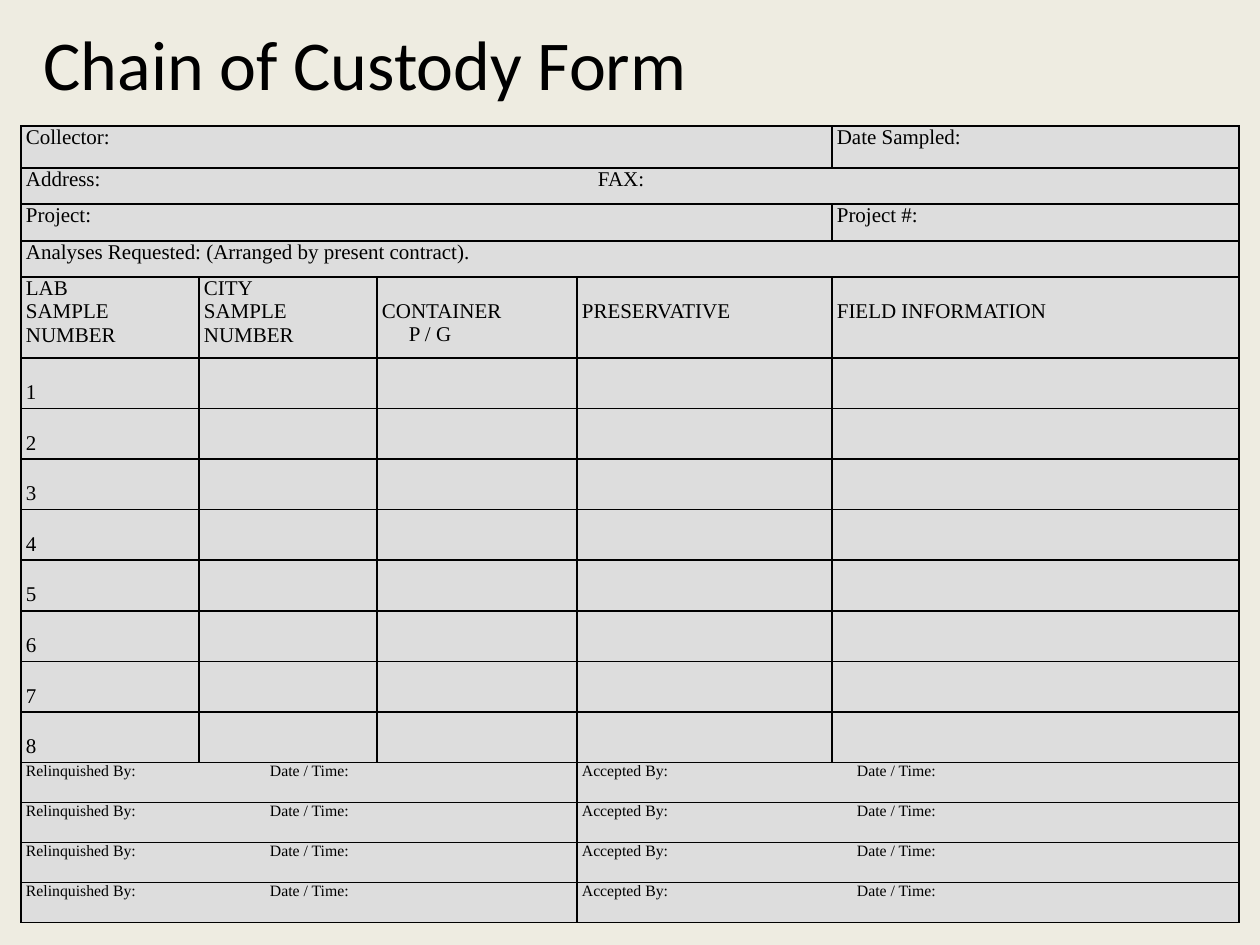
from lxml import etree
from pptx import Presentation
from pptx.dml.color import RGBColor
from pptx.enum.text import MSO_ANCHOR, PP_ALIGN
from pptx.oxml.ns import qn
from pptx.util import Pt

PX = 914400 // 126
MIDDLE, LEFT = MSO_ANCHOR.MIDDLE, PP_ALIGN.LEFT
TITLE_FONT, FORM_FONT = "Calibri", "Times New Roman"
INK, CELL_FILL, BACKGROUND = "000000", "DDDDDD", "EEECE1"
LINE_HEIGHT = 23

TITLE = "Chain of Custody Form"
COLUMN_WIDTHS = [178, 178, 200, 255, 407]
SAMPLE_COUNT, SAMPLES_HEIGHT = 8, 405
TRANSFER_COUNT, TRANSFER_HEIGHT = 4, 40

# Each row: height, text size, lines pushed down by one, and cells as (text, columns, tab stop)
DETAIL_ROWS = [
    (42, 12, [("Collector:", 4, 0), ("Date Sampled:", 1, 0)]),
    (36, 12, [("Address:\tFAX:", 5, 572)]),
    (37, 12, [("Project:", 4, 0), ("Project #:", 1, 0)]),
    (36, 12, [("Analyses Requested: (Arranged by present contract).", 5, 0)]),
    (81, 12, [
        ("LAB\nSAMPLE\nNUMBER", 1, 0),
        ("CITY\nSAMPLE\nNUMBER", 1, 0),
        ("CONTAINER\nP / G", 1, 0),
        ("PRESERVATIVE", 1, 0),
        ("FIELD INFORMATION", 1, 0),
    ]),
]
SAMPLE_ROWS = [
    (SAMPLES_HEIGHT / SAMPLE_COUNT, 12, [(str(number), 1, 0)] + [("", 1, 0)] * 4)
    for number in range(1, SAMPLE_COUNT + 1)
]
TRANSFER_ROWS = [
    (TRANSFER_HEIGHT, 9, [("Relinquished By:\tDate / Time:", 3, 244),
                          ("Accepted By:\tDate / Time:", 2, 275)])
] * TRANSFER_COUNT
ROWS = DETAIL_ROWS + SAMPLE_ROWS + TRANSFER_ROWS
LOWERED = {"CONTAINER\nP / G", "PRESERVATIVE", "FIELD INFORMATION"} | {
    cells[0][0] for _, _, cells in SAMPLE_ROWS
}


def px(value):
    return round(value * PX)


def color(value):
    return RGBColor.from_string(value)


def style_cell(cell):
    """Give a cell its borders, fill and margins."""
    properties = cell._tc.get_or_add_tcPr()
    for side in ("lnL", "lnR", "lnT", "lnB"):
        line = etree.SubElement(properties, qn(f"a:{side}"), w=str(Pt(1)))
        fill = etree.SubElement(line, qn("a:solidFill"))
        etree.SubElement(fill, qn("a:srgbClr"), val=INK)
    cell.fill.solid()
    cell.fill.fore_color.rgb = color(CELL_FILL)
    cell.margin_left = cell.margin_right = px(5)
    cell.margin_top = cell.margin_bottom = 0


def write_cell(cell, text, size, tab):
    cell.text_frame.text = text
    if text in LOWERED:
        cell.margin_top = px(LINE_HEIGHT)
    for paragraph in cell.text_frame.paragraphs:
        if paragraph.text == "P / G":
            paragraph._p.get_or_add_pPr().set("marL", str(px(27)))
        if tab:
            stops = etree.SubElement(paragraph._p.get_or_add_pPr(), qn("a:tabLst"))
            etree.SubElement(stops, qn("a:tab"), pos=str(px(tab)), algn="l")
        for run in paragraph.runs:
            run.font.size = Pt(size)
            run.font.name = FORM_FONT
            run.font.color.rgb = color(INK)
        if not text:
            etree.SubElement(paragraph._p, qn("a:endParaRPr"), sz=str(size * 100))


def add_title(slide):
    title = slide.shapes.title
    title.left, title.top, title.width, title.height = map(px, (31, 21, 1176, 84))
    title.text_frame.text = TITLE
    title.text_frame.vertical_anchor = MIDDLE
    paragraph = title.text_frame.paragraphs[0]
    paragraph.alignment = LEFT
    font = paragraph.runs[0].font
    font.size = Pt(40)
    font.name = TITLE_FONT
    font.color.rgb = color(INK)


def add_form(slide):
    width, height = sum(COLUMN_WIDTHS), sum(row[0] for row in ROWS)
    table = slide.shapes.add_table(
        len(ROWS), len(COLUMN_WIDTHS), px(21), px(126), px(width), px(height)
    ).table
    table.first_row = table.horz_banding = False
    for column, column_width in zip(table.columns, COLUMN_WIDTHS):
        column.width = px(column_width)
    for row_index, (row_height, size, cells) in enumerate(ROWS):
        table.rows[row_index].height = px(row_height)
        for cell in table.rows[row_index].cells:
            style_cell(cell)
        first = 0
        for text, span, tab in cells:
            cell = table.cell(row_index, first)
            if span > 1:
                cell.merge(table.cell(row_index, first + span - 1))
            write_cell(cell, text, size, tab)
            first += span


def main():
    presentation = Presentation()
    presentation.slide_width, presentation.slide_height = px(1260), px(945)
    slide = presentation.slides.add_slide(presentation.slide_layouts[5])
    slide.background.fill.solid()
    slide.background.fill.fore_color.rgb = color(BACKGROUND)
    add_form(slide)
    add_title(slide)
    presentation.save("out.pptx")


if __name__ == "__main__":
    main()
